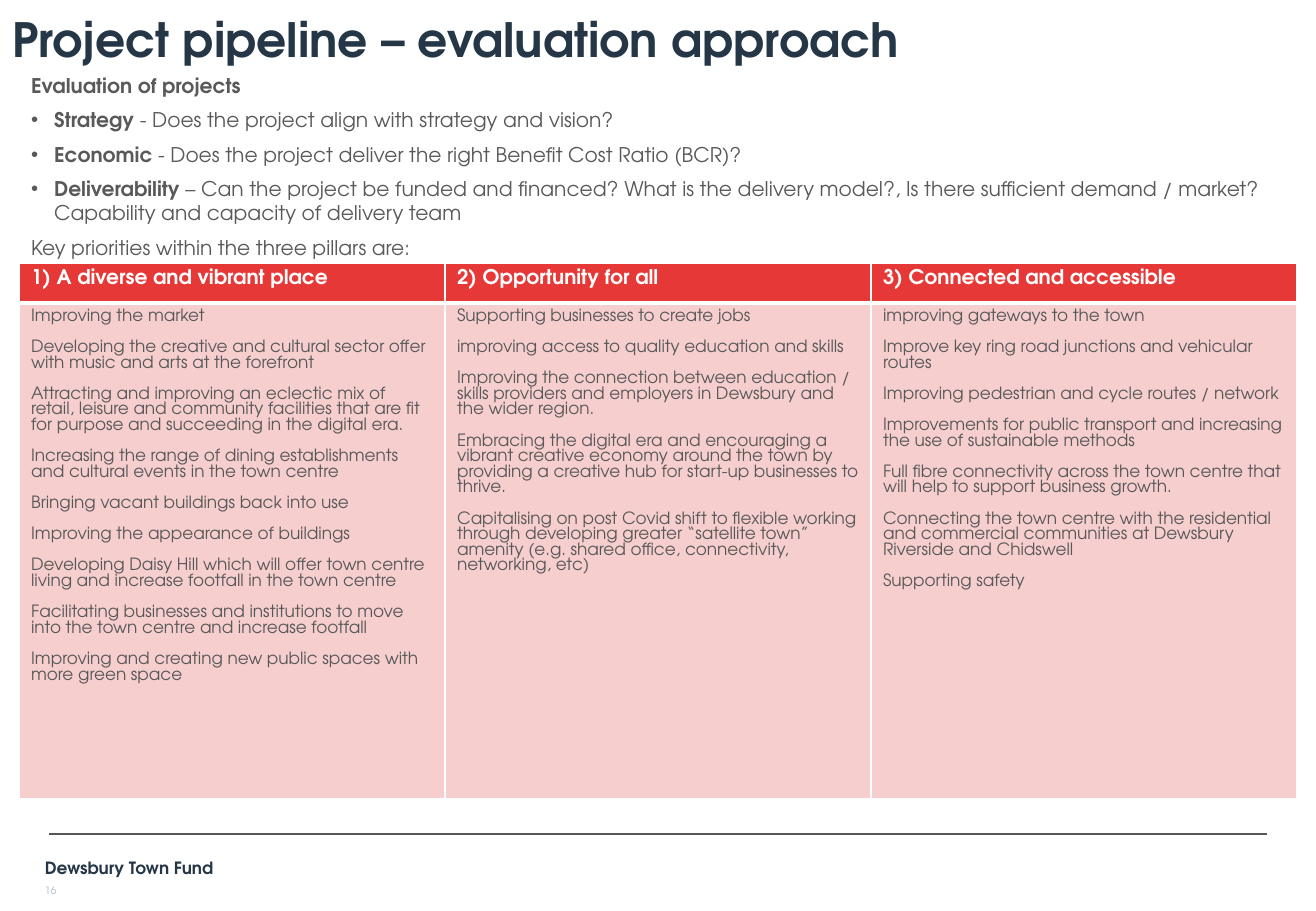
import pptx
import pptx.dml.color
import pptx.enum.shapes
import pptx.enum.text
import pptx.oxml.ns
import pptx.util
from lxml import etree

PX = 914400 / 121.5
THEME = {
    "font": "TeX Gyre Adventor",
    "navy": "253746", "text": "595959", "cell_text": "585858", "rule": "585858",
    "page": "AAB9CA", "white": "FFFFFF", "header": "E73838", "cell": "F6CECE",
    "title_pt": 28, "body_pt": 12, "cell_pt": 10, "footer_pt": 10, "page_pt": 6,
}
CRITERIA = [
    ("", "Evaluation of projects", ""),
    ("•", "Strategy", " - Does the project align with strategy and vision?"),
    ("•", "Economic", " - Does the project deliver the right Benefit Cost Ratio (BCR)?"),
    ("•", "Deliverability", " – Can the project be funded and financed? What is the delivery model?, "
     "Is there sufficient demand / market? Capability and capacity of delivery team"),
    ("", "", "Key priorities within the three pillars are:"),
]
PILLARS = {
    "1) A diverse and vibrant place": [
        "Improving the market",
        "Developing the creative and cultural sector offer with music and arts at the forefront",
        "Attracting and improving an eclectic mix of retail, leisure and community facilities "
        "that are fit for purpose and succeeding in the digital era.",
        "Increasing the range of dining establishments and cultural events in the town centre",
        "Bringing vacant buildings back into use",
        "Improving the appearance of buildings",
        "Developing Daisy Hill which will offer town centre living and increase footfall in the town centre",
        "Facilitating businesses and institutions to move into the town centre and increase footfall",
        "Improving and creating new public spaces with more green space",
    ],
    "2) Opportunity for all": [
        "Supporting businesses to create jobs",
        "improving access to quality education and skills",
        "Improving the connection between education / skills providers and employers in Dewsbury "
        "and the wider region.",
        "Embracing the digital era and encouraging a vibrant creative economy around the town "
        "by providing a creative hub for start-up businesses to thrive.",
        "Capitalising on post Covid shift to flexible working through developing greater "
        "“satellite town” amenity (e.g. shared office, connectivity, networking, etc)",
    ],
    "3) Connected and accessible": [
        "improving gateways to the town",
        "Improve key ring road junctions and vehicular routes",
        "Improving pedestrian and cycle routes / network",
        "Improvements for public transport and increasing the use of sustainable methods",
        "Full fibre connectivity across the town centre that will help to support business growth.",
        "Connecting the town centre with the residential and commercial communities at "
        "Dewsbury Riverside and Chidswell",
        "Supporting safety",
    ],
}


def box(*lengths):
    """Turn px lengths into EMU."""
    return [round(length * PX) for length in lengths]


def style(run, size, color, bold=False):
    run.font.name = THEME["font"]
    run.font.size = pptx.util.Pt(THEME[size])
    run.font.bold = bold
    run.font.color.rgb = pptx.dml.color.RGBColor.from_string(THEME[color])


prs = pptx.Presentation()
prs.slide_width, prs.slide_height = box(1316, 911)
slide = prs.slides.add_slide(prs.slide_layouts[1])

# Title and evaluation criteria
title, criteria = slide.placeholders
title.left, title.top, title.width, title.height = box(0, 11, 1237, 56)
criteria.left, criteria.top, criteria.width, criteria.height = box(19, 67, 1279, 620)
for placeholder in (title, criteria):
    frame = placeholder.text_frame
    frame.word_wrap = True
    frame.auto_size = pptx.enum.text.MSO_AUTO_SIZE.NONE
    frame.vertical_anchor = pptx.enum.text.MSO_ANCHOR.TOP

title.text_frame.text = "Project pipeline – evaluation approach"
heading = title.text_frame.paragraphs[0]
heading.alignment = pptx.enum.text.PP_ALIGN.LEFT
heading.line_spacing = 0.9
style(heading.runs[0], "title_pt", "navy", True)

for index, (bullet, term, question) in enumerate(CRITERIA):
    frame = criteria.text_frame
    paragraph = frame.add_paragraph() if index else frame.paragraphs[0]
    properties = paragraph._p.get_or_add_pPr()
    indent = box(23)[0] if bullet else 0
    properties.set("marL", str(indent))
    properties.set("indent", str(-indent))
    if bullet:
        etree.SubElement(properties, pptx.oxml.ns.qn("a:buChar")).set("char", bullet)
    else:
        etree.SubElement(properties, pptx.oxml.ns.qn("a:buNone"))
    paragraph.space_before = pptx.util.Pt(0)
    paragraph.space_after = pptx.util.Pt(6)
    for words, bold in ((term, True), (question, False)):
        if words:
            run = paragraph.add_run()
            run.text = words
            style(run, "body_pt", "text", bold)

# Table of the three pillars
table = slide.shapes.add_table(2, len(PILLARS), *box(19, 263, 1278, 536)).table
table.horz_banding = False
table.rows[0].height, table.rows[1].height = box(40, 496)
for column, (pillar, priorities) in enumerate(PILLARS.items()):
    table.columns[column].width = box(426)[0]
    for row, lines in enumerate(([pillar], priorities)):
        is_header = row == 0
        cell = table.cell(row, column)
        cell.text_frame.text = "\n".join(lines)
        for paragraph in cell.text_frame.paragraphs:
            if is_header:
                style(paragraph.runs[0], "body_pt", "white", True)
            else:
                paragraph.space_after = pptx.util.Pt(9.24)
                style(paragraph.runs[0], "cell_pt", "cell_text")
        cell_properties = cell._tc.get_or_add_tcPr()
        for side in ("lnL", "lnR", "lnT", "lnB"):
            points = 3 if side == ("lnB" if is_header else "lnT") else 1
            border = etree.SubElement(cell_properties, pptx.oxml.ns.qn(f"a:{side}"))
            border.set("w", str(pptx.util.Pt(points)))
            fill = etree.SubElement(border, pptx.oxml.ns.qn("a:solidFill"))
            etree.SubElement(fill, pptx.oxml.ns.qn("a:srgbClr")).set("val", THEME["white"])
        cell.fill.solid()
        cell.fill.fore_color.rgb = pptx.dml.color.RGBColor.from_string(
            THEME["header" if is_header else "cell"])

# Footer
rule = slide.shapes.add_connector(
    pptx.enum.shapes.MSO_CONNECTOR.STRAIGHT, *box(49, 834, 1267, 834))
rule.line.color.rgb = pptx.dml.color.RGBColor.from_string(THEME["rule"])
rule.line.width = pptx.util.Pt(1)
etree.SubElement(rule._element.spPr, pptx.oxml.ns.qn("a:effectLst"))

for words, place, size, color, bold, top_inset, bottom_inset in (
    ("Dewsbury Town Fund", (33, 854, 735, 28), "footer_pt", "navy", True, 6, 6),
    ("16", (33, 884, 295, 18), "page_pt", "page", False, 0, 5),
):
    frame = slide.shapes.add_textbox(*box(*place)).text_frame
    frame.word_wrap = True
    frame.vertical_anchor = pptx.enum.text.MSO_ANCHOR.MIDDLE
    frame.margin_top, frame.margin_bottom = box(top_inset, bottom_inset)
    frame.text = words
    style(frame.paragraphs[0].runs[0], size, color, bold)

prs.save("out.pptx")
